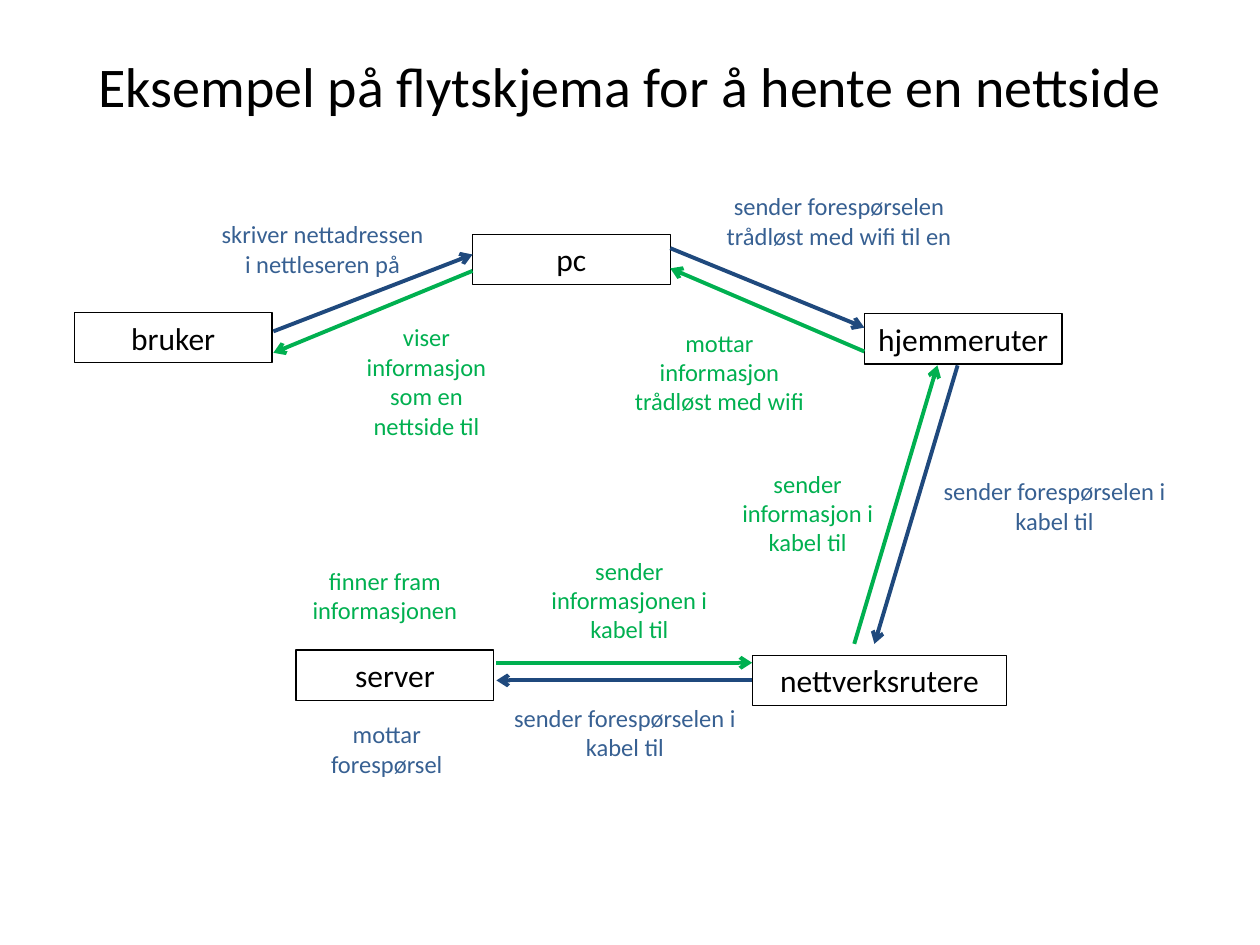
from pptx import Presentation
from pptx.dml.color import RGBColor
from pptx.enum.shapes import MSO_CONNECTOR as LINK, MSO_SHAPE as SHAPE
from pptx.enum.text import MSO_ANCHOR as ANCHOR, PP_ALIGN as ALIGN
from pptx.oxml.ns import qn
from pptx.util import Inches, Pt
from lxml.etree import SubElement

BLACK = RGBColor(0x00, 0x00, 0x00)
NAVY = RGBColor(0x1F, 0x49, 0x7D)
BLUE = RGBColor(0x37, 0x60, 0x92)
GREEN = RGBColor(0x00, 0xB0, 0x50)

deck = Presentation()
deck.slide_width = Inches(10)
deck.slide_height = Inches(7.5)
slide = deck.slides.add_slide(deck.slide_layouts[6])
shapes = slide.shapes


def write(shape, text, size=14, color=BLACK, anchor=ANCHOR.TOP):
    frame = shape.text_frame
    frame.word_wrap = True
    frame.vertical_anchor = anchor
    frame.text = text
    for para in frame.paragraphs:
        para.alignment = ALIGN.CENTER
        para.font.name = "Calibri"
        para.font.size = Pt(size)
        para.font.color.rgb = color


title = shapes.add_textbox(Inches(0.5), Inches(0.05), Inches(9), Inches(1.25))
write(title, "Eksempel på flytskjema for å hente en nettside", size=32,
      anchor=ANCHOR.MIDDLE)

nodes = [
    ("bruker", 0.59, 2.48, 1.57),
    ("pc", 3.75, 1.86, 1.57),
    ("hjemmeruter", 6.86, 2.49, 1.57),
    ("nettverksrutere", 5.97, 5.2, 2.02),
    ("server", 2.35, 5.16, 1.57),
]
for text, left, top, width in nodes:
    node = shapes.add_shape(SHAPE.RECTANGLE, Inches(left), Inches(top),
                            Inches(width), Inches(0.4))
    node.shadow.inherit = False
    node.fill.background()
    node.line.color.rgb = BLACK
    node.line.width = Pt(0.75)
    write(node, text, size=18)

arrows = [
    (2.17, 2.63, 3.75, 2.02, NAVY),
    (5.32, 1.97, 6.86, 2.6, NAVY),
    (7.6, 2.9, 6.94, 5.11, NAVY),
    (5.97, 5.4, 3.94, 5.4, NAVY),
    (3.94, 5.26, 5.97, 5.26, GREEN),
    (6.78, 5.11, 7.44, 2.9, GREEN),
    (6.86, 2.79, 5.32, 2.13, GREEN),
    (3.75, 2.15, 2.17, 2.8, GREEN),
]
for *ends, color in arrows:
    arrow = shapes.add_connector(LINK.STRAIGHT, *map(Inches, ends))
    arrow.line.color.rgb = color
    arrow.line.width = Pt(2.25)
    SubElement(arrow.line._get_or_add_ln(), qn("a:tailEnd"), type="arrow")
    SubElement(arrow._element.spPr, qn("a:effectLst"))

labels = [
    ("skriver nettadressen i nettleseren på", 1.64, 1.69, 1.84, 0.57, BLUE),
    ("sender forespørselen trådløst med wifi til en",
     5.41, 1.47, 2.5, 0.57, BLUE),
    ("sender forespørselen i kabel til", 7.2, 3.73, 2.34, 0.57, BLUE),
    ("sender forespørselen i kabel til", 3.79, 5.53, 2.34, 0.57, BLUE),
    ("mottar forespørsel", 2.4, 5.66, 1.34, 0.57, BLUE),
    ("finner fram informasjonen", 2.17, 4.44, 1.77, 0.57, GREEN),
    ("sender informasjonen i kabel til", 4.24, 4.36, 1.51, 0.81, GREEN),
    ("sender informasjon i\nkabel til", 5.62, 3.67, 1.58, 0.81, GREEN),
    ("mottar informasjon trådløst med wifi", 4.92, 2.55, 1.58, 0.81, GREEN),
    ("viser informasjon som en nettside til", 2.71, 2.51, 1.35, 1.04, GREEN),
]
for text, *area, color in labels:
    label = shapes.add_textbox(*map(Inches, area))
    write(label, text, color=color)

deck.save("out.pptx")
